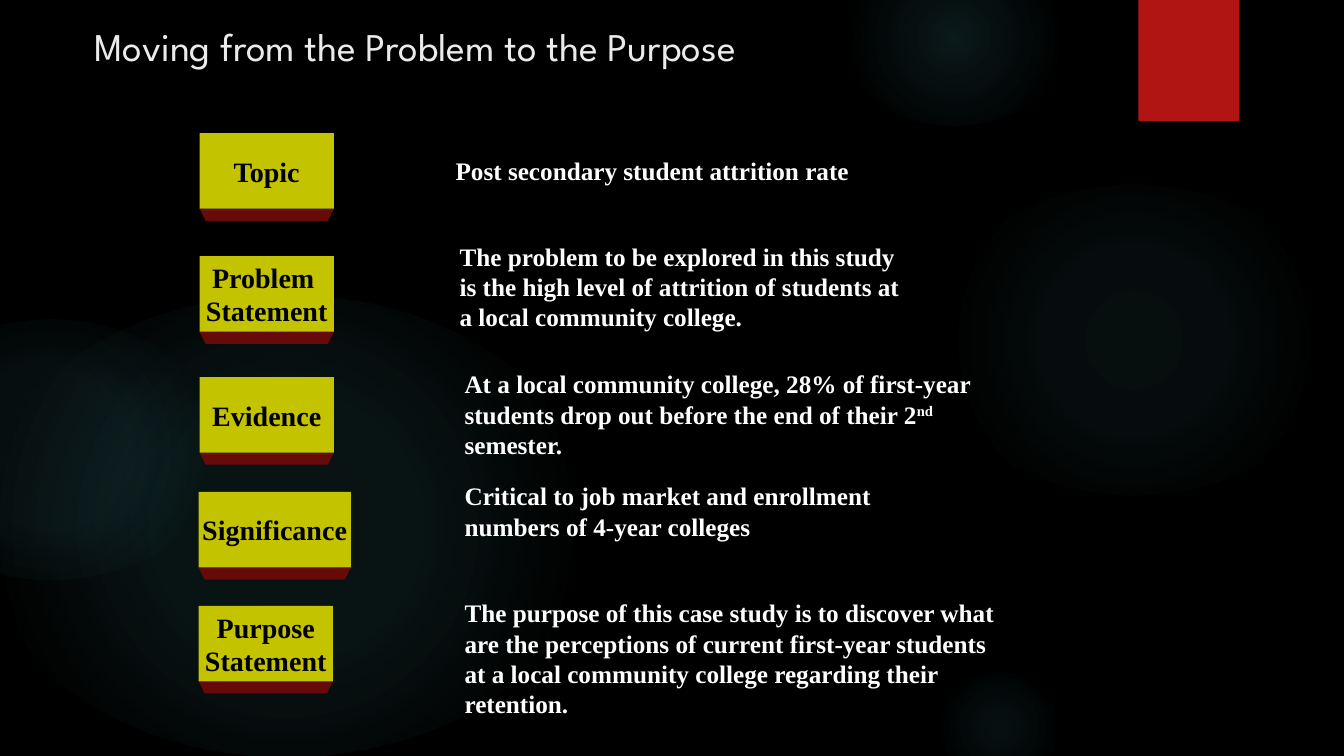
from collections import namedtuple

from lxml.etree import SubElement
from pptx import Presentation
from pptx.dml.color import RGBColor
from pptx.enum.shapes import MSO_SHAPE as Preset
from pptx.enum.text import MSO_ANCHOR as Anchor, MSO_AUTO_SIZE as AutoSize, PP_ALIGN as Align
from pptx.oxml.ns import qn
from pptx.util import Inches, Pt

Box = namedtuple("Box", "left top width height")

SLIDE_WIDTH, SLIDE_HEIGHT = Inches(13.33), Inches(7.5)
BLACK, WHITE, RED = "000000", "FFFFFF", "B01513"
LABEL_FACE, LABEL_EDGE = "C3C300", "660A0A"
GLOW, TITLE_COLOUR = "50B9C1", "EBEBEB"
EDGE_DEPTH, EDGE_INSET = 1.6, 0.45

TITLE_FORMAT = {"name": "League Spartan", "size": Pt(28), "bold": False}
LABEL_FORMAT = {"name": "Times New Roman", "size": Pt(20), "bold": True}
NOTE_FORMAT = {"name": "Times New Roman", "size": Pt(18), "bold": True}

GLOWS = [
    (68.94, 24.4, 30.83, [(0, 7), (36, 6), (69, 0)]),
    (62.27, -6.67, 17.48, [(0, 14), (36, 7), (73, 0)]),
    (68.94, 88.93, 10.8, [(0, 9), (36, 5), (66, 0)]),
    (-1.65, 38.93, 45.84, [(0, 11), (36, 10), (75, 0)]),
    (-9.15, 42.27, 25.81, [(0, 8), (36, 8), (72, 0)]),
]

STEPS = [
    (["Topic"], Box(14.85, 17.6, 10, 10),
     ["Post secondary student attrition rate"], Box(33.16, 19.87, 35.93, 5.33)),
    (["Problem ", "Statement"], Box(14.85, 33.87, 10, 10),
     ["The problem to be explored in this study is the high level of attrition "
      "of students at a local community college."], Box(33.46, 31.2, 34.88, 17.47)),
    (["Evidence"], Box(14.85, 49.87, 10, 10),
     ["At a local community college, 28% of first-year students drop out before "
      "the end of their 2", "nd", " semester."], Box(33.83, 48.13, 41.26, 13.47)),
    (["Significance"], Box(14.78, 65.07, 11.33, 10),
     ["Critical to job market and enrollment numbers of 4-year colleges"],
     Box(33.83, 62.93, 31.73, 13.47)),
    (["Purpose", "Statement"], Box(14.78, 80.13, 10, 10),
     ["The purpose of this case study is to discover what are the perceptions of "
      "current first-year students at a local community college regarding their "
      "retention."], Box(33.83, 78.4, 41.94, 17.47)),
]


def colour(value):
    return RGBColor.from_string(value)


def across(share):
    return round(SLIDE_WIDTH * share / 100)


def down(share):
    return round(SLIDE_HEIGHT * share / 100)


def place(box):
    return across(box.left), down(box.top), across(box.width), down(box.height)


def paint(shape, fill):
    shape.shadow.inherit = False
    shape.line.fill.background()
    shape.fill.solid()
    shape.fill.fore_color.rgb = colour(fill)


def add_span(para, text, formats, text_colour):
    span = para.add_run()
    span.text = text
    for name, value in formats.items():
        setattr(span.font, name, value)
    span.font.color.rgb = colour(text_colour)
    return span


def add_glow(page, box, stops):
    glow = page.shapes.add_shape(Preset.OVAL, *place(box))
    paint(glow, GLOW)
    glow.fill.gradient()
    gradient = glow._element.spPr.find(qn("a:gradFill"))
    for child in list(gradient):
        gradient.remove(child)
    stop_list = SubElement(gradient, qn("a:gsLst"))
    for position, opacity in stops:
        stop = SubElement(stop_list, qn("a:gs"), pos=str(position * 1000))
        tint = SubElement(stop, qn("a:srgbClr"), val=GLOW)
        SubElement(tint, qn("a:alpha"), val=str(opacity * 1000))
    shade = SubElement(gradient, qn("a:path"), path="circle")
    SubElement(shade, qn("a:fillToRect"), dict.fromkeys("ltrb", "50000"))


def add_backdrop(page):
    page.background.fill.solid()
    page.background.fill.fore_color.rgb = colour(BLACK)
    for left, top, size, stops in GLOWS:
        add_glow(page, Box(left, top, size, size * 4 / 3), stops)
    ribbon = page.shapes.add_shape(Preset.RECTANGLE, *place(Box(84.7, 0, 7.5, 16)))
    paint(ribbon, RED)


def add_title(page, box, text):
    title = page.shapes.title
    title.left, title.top, title.width, title.height = place(box)
    frame = title.text_frame
    frame.vertical_anchor = Anchor.TOP
    frame.auto_size = AutoSize.NONE
    para = frame.paragraphs[0]
    para.alignment = Align.LEFT
    add_span(para, text, TITLE_FORMAT, TITLE_COLOUR)


def add_label(page, box, lines):
    right, bottom = box.left + box.width, box.top + box.height
    low = down(bottom + EDGE_DEPTH)
    outline = page.shapes.build_freeform(across(box.left), down(bottom), scale=1.0)
    outline.add_line_segments([
        (across(right), down(bottom)),
        (across(right - EDGE_INSET), low),
        (across(box.left + EDGE_INSET), low),
    ], close=True)
    paint(outline.convert_to_shape(), LABEL_EDGE)

    face = page.shapes.add_shape(Preset.RECTANGLE, *place(box))
    paint(face, LABEL_FACE)
    frame = face.text_frame
    frame.word_wrap = False
    frame.vertical_anchor = Anchor.MIDDLE
    for index, line in enumerate(lines):
        para = frame.add_paragraph() if index else frame.paragraphs[0]
        para.alignment = Align.CENTER
        add_span(para, line, LABEL_FORMAT, BLACK)


def add_note(page, box, pieces):
    frame = page.shapes.add_textbox(*place(box)).text_frame
    frame.word_wrap = True
    for piece in pieces:
        span = add_span(frame.paragraphs[0], piece, NOTE_FORMAT, WHITE)
        if piece == "nd":
            span._r.get_or_add_rPr().set("baseline", "30000")


def main():
    deck = Presentation()
    deck.slide_width, deck.slide_height = SLIDE_WIDTH, SLIDE_HEIGHT
    page = deck.slides.add_slide(deck.slide_layouts[5])
    add_backdrop(page)
    add_title(page, Box(6.25, 2.27, 65.64, 13.33), "Moving from the Problem to the Purpose")
    for label, label_box, note, note_box in STEPS:
        add_label(page, label_box, label)
        add_note(page, note_box, note)
    deck.save("out.pptx")


if __name__ == "__main__":
    main()
